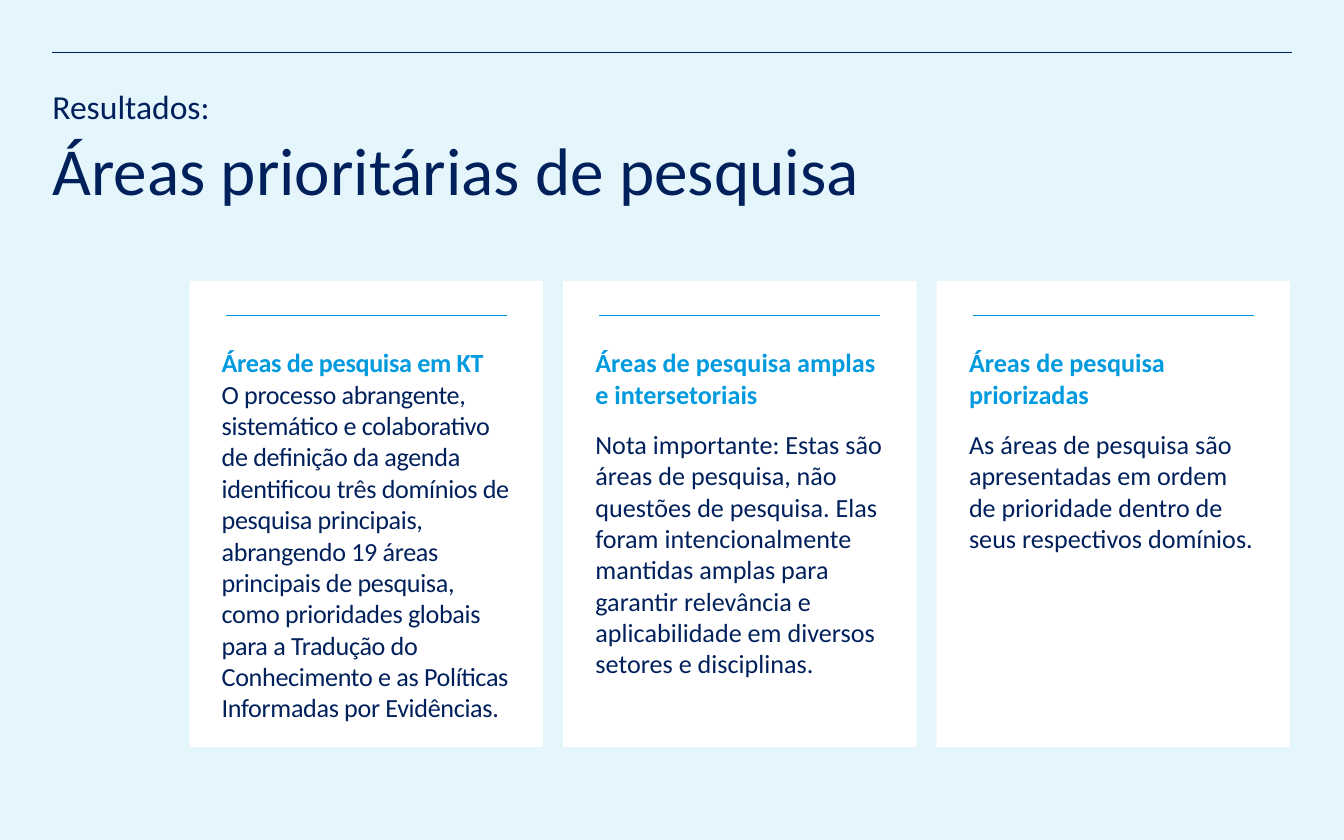
"""Build the slide on priority research areas: a heading above three cards."""
from dataclasses import dataclass

from lxml.etree import SubElement
from pptx import Presentation
from pptx.dml.color import RGBColor
from pptx.enum.shapes import MSO_CONNECTOR, MSO_SHAPE
from pptx.enum.text import MSO_ANCHOR, MSO_AUTO_SIZE, PP_ALIGN
from pptx.oxml.ns import qn
from pptx.slide import Slide
from pptx.text.text import TextFrame, _Paragraph
from pptx.util import Inches, Pt


@dataclass(frozen=True)
class Theme:
    font: str = "Calibri"
    background: RGBColor = RGBColor.from_string("E5F5FC")
    card: RGBColor = RGBColor.from_string("FFFFFF")
    dark: RGBColor = RGBColor.from_string("00205C")
    accent: RGBColor = RGBColor.from_string("009ADE")
    title_size: int = 36
    kicker_size: int = 18
    card_size: int = 14
    rule_width: float = 0.5


@dataclass(frozen=True)
class Grid:
    width: float = 10
    height: float = 6.25
    columns: int = 100
    rows: int = 100

    def x(self, columns: float) -> int:
        return Inches(self.width * columns / self.columns)

    def y(self, rows: float) -> int:
        return Inches(self.height * rows / self.rows)

    def box(self, left: float, top: float, width: float, height: float) -> tuple:
        return self.x(left), self.y(top), self.x(width), self.y(height)


@dataclass(frozen=True)
class Card:
    heading: str
    body: str
    heading_gap: int = 10
    tracking: int = 0


THEME = Theme()
GRID = Grid()
MARGIN = 3.9
CARD_LEFT, CARD_TOP, CARD_WIDTH, CARD_HEIGHT = 14.1, 33.44, 26.3, 55.52
CARD_PITCH = 27.8
RULE_INSET, RULE_TOP = 2.7, 37.6
TEXT_TOP, TEXT_HEIGHT, TEXT_INSET = 41.28, 43.68, 2.4

CARDS = (
    Card(
        "Áreas de pesquisa em KT",
        "O processo abrangente, sistemático e colaborativo de definição da agenda "
        "identificou três domínios de pesquisa principais, abrangendo 19 áreas "
        "principais de pesquisa, como prioridades globais para a Tradução do "
        "Conhecimento e as Políticas Informadas por Evidências.",
        heading_gap=0,
        tracking=-20,
    ),
    Card(
        "Áreas de pesquisa amplas e intersetoriais",
        "Nota importante: Estas são áreas de pesquisa, não questões de pesquisa. "
        "Elas foram intencionalmente mantidas amplas para garantir relevância e "
        "aplicabilidade em diversos setores e disciplinas.",
    ),
    Card(
        "Áreas de pesquisa priorizadas",
        "As áreas de pesquisa são apresentadas em ordem de prioridade dentro de "
        "seus respectivos domínios.",
    ),
)


def apply_format(target: object, values: dict) -> None:
    for name, value in values.items():
        setattr(target, name, value)


def format_frame(frame: TextFrame, inset: float = 0) -> None:
    apply_format(frame, {
        "word_wrap": True,
        "auto_size": MSO_AUTO_SIZE.NONE,
        "vertical_anchor": MSO_ANCHOR.TOP,
        "margin_left": GRID.x(inset),
        "margin_right": GRID.x(inset),
        "margin_top": 0,
        "margin_bottom": 0,
    })


def write(paragraph: _Paragraph, text: str, size: int, color: RGBColor,
          bold: bool = False, tracking: int = 0, **spacing: object) -> None:
    run = paragraph.add_run()
    run.text = text
    apply_format(run.font, {"name": THEME.font, "size": Pt(size), "bold": bold})
    run.font.color.rgb = color
    if tracking:
        run._r.get_or_add_rPr().set("spc", str(tracking))
    apply_format(paragraph, {"alignment": PP_ALIGN.LEFT, **spacing})


def draw_rule(slide: Slide, left: float, right: float, top: float, color: RGBColor) -> None:
    rule = slide.shapes.add_connector(
        MSO_CONNECTOR.STRAIGHT, GRID.x(left), GRID.y(top), GRID.x(right), GRID.y(top))
    rule.line.color.rgb = color
    rule.line.width = Pt(THEME.rule_width)
    SubElement(rule._element.spPr, qn("a:effectLst"))


def draw_card(slide: Slide, card: Card, left: float) -> None:
    panel = slide.shapes.add_shape(
        MSO_SHAPE.RECTANGLE, *GRID.box(left, CARD_TOP, CARD_WIDTH, CARD_HEIGHT))
    panel.shadow.inherit = False
    panel.fill.solid()
    panel.fill.fore_color.rgb = THEME.card
    panel.line.fill.background()
    draw_rule(slide, left + RULE_INSET, left + CARD_WIDTH - RULE_INSET, RULE_TOP, THEME.accent)
    frame = slide.shapes.add_textbox(
        *GRID.box(left, TEXT_TOP, CARD_WIDTH, TEXT_HEIGHT)).text_frame
    format_frame(frame, TEXT_INSET)
    write(frame.paragraphs[0], card.heading, THEME.card_size, THEME.accent, bold=True,
          tracking=card.tracking, space_after=Pt(card.heading_gap))
    write(frame.add_paragraph(), card.body, THEME.card_size, THEME.dark,
          tracking=card.tracking, space_after=Pt(10))


def draw_heading(slide: Slide) -> None:
    draw_rule(slide, MARGIN, GRID.columns - MARGIN, 6.24, THEME.dark)
    title = slide.shapes.title
    left, top, width, height = GRID.box(MARGIN, 16.32, 63.6, 11.52)
    apply_format(title, {"left": left, "top": top, "width": width, "height": height})
    kicker = slide.shapes.add_textbox(*GRID.box(MARGIN, 10.72, 28.8, 5.6))
    for shape, text, size in (
        (title, "Áreas prioritárias de pesquisa", THEME.title_size),
        (kicker, "Resultados:", THEME.kicker_size),
    ):
        format_frame(shape.text_frame)
        write(shape.text_frame.paragraphs[0], text, size, THEME.dark, line_spacing=0.9)


def main() -> None:
    presentation = Presentation()
    apply_format(presentation, {
        "slide_width": Inches(GRID.width), "slide_height": Inches(GRID.height)})
    slide = presentation.slides.add_slide(presentation.slide_layouts.get_by_name("Title Only"))
    slide.background.fill.solid()
    slide.background.fill.fore_color.rgb = THEME.background
    draw_heading(slide)
    for index, card in enumerate(CARDS):
        draw_card(slide, card, CARD_LEFT + index * CARD_PITCH)
    presentation.save("out.pptx")


if __name__ == "__main__":
    main()
